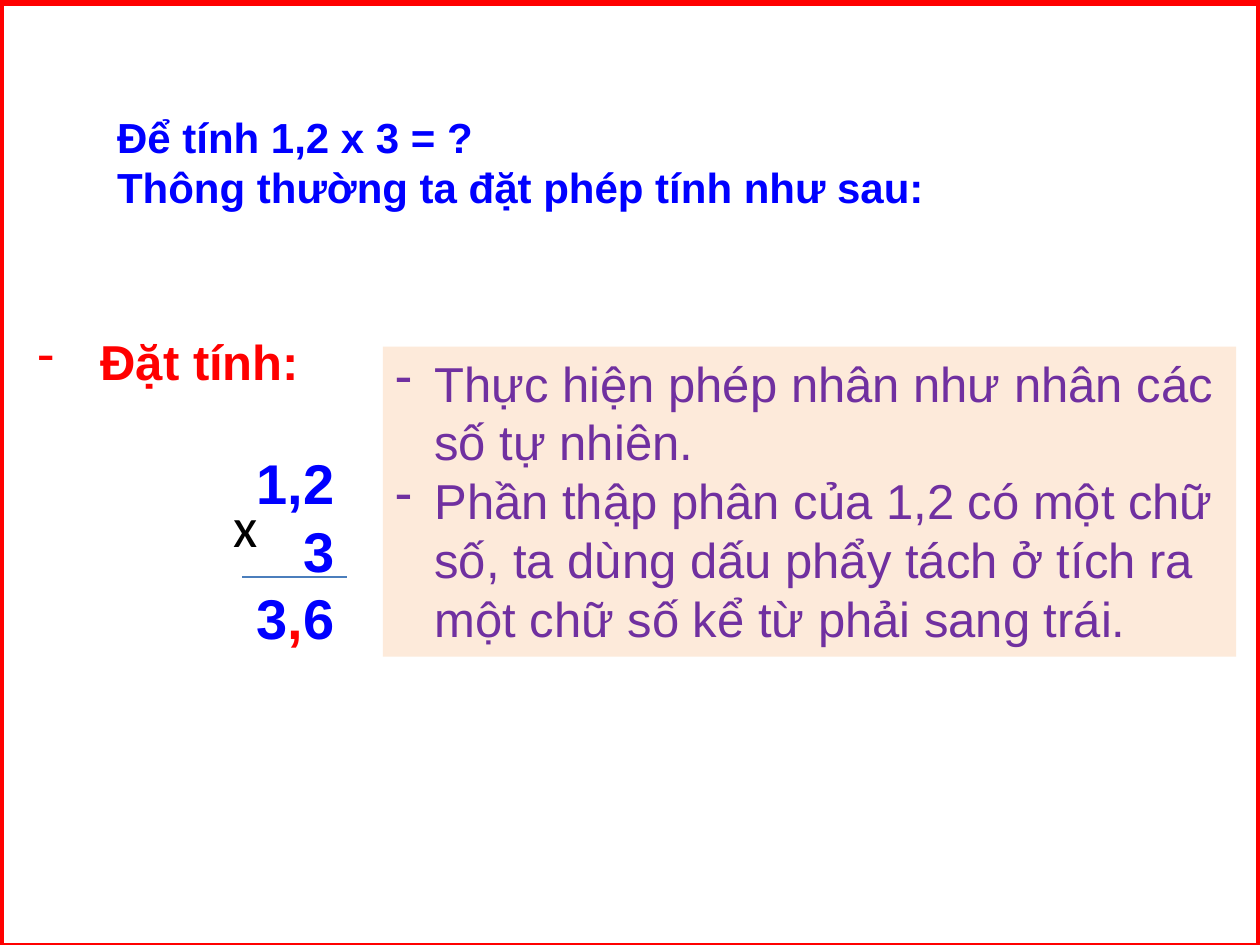
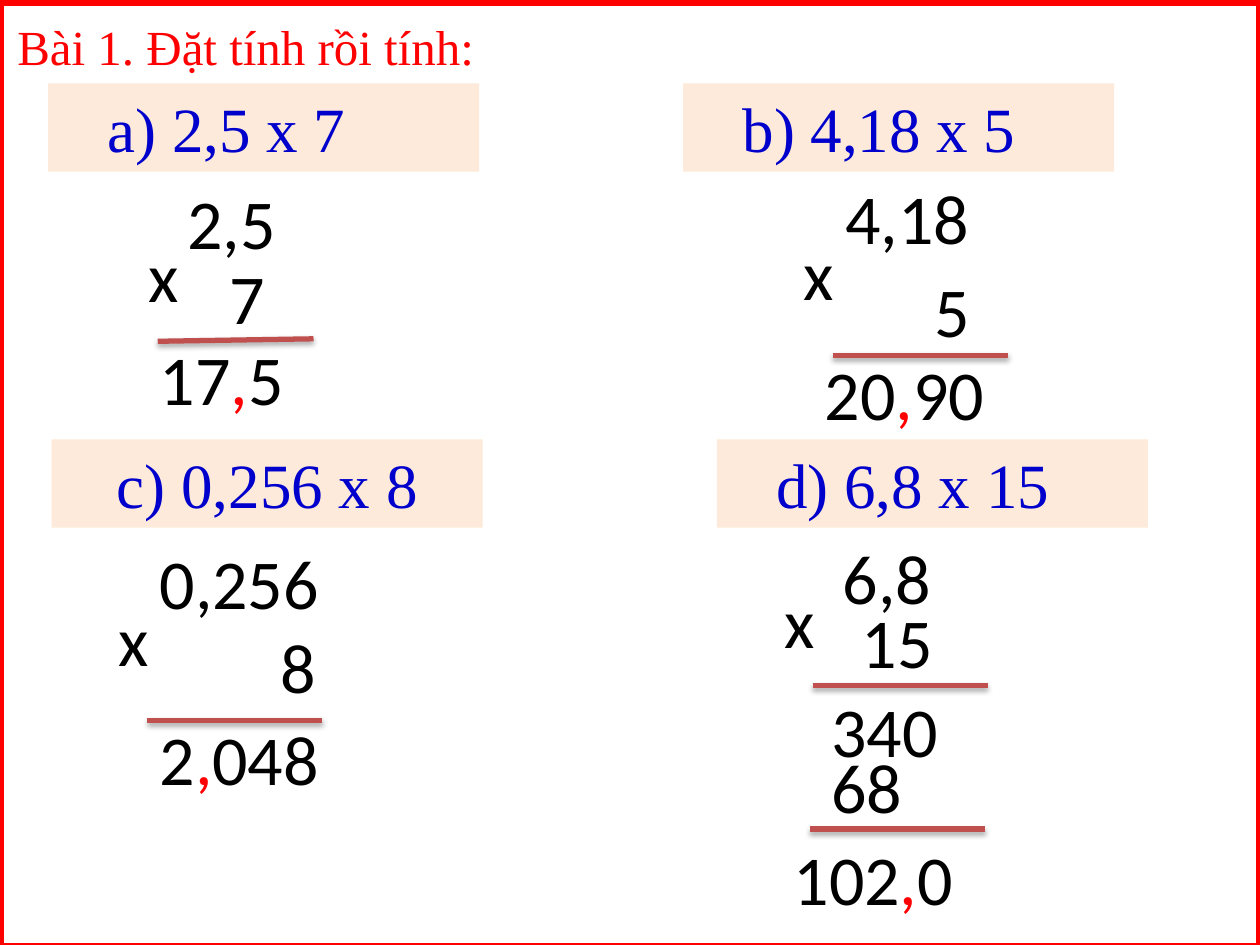
"""Build two lesson slides on multiplying a decimal by a whole number."""
from dataclasses import dataclass

from lxml import etree
from pptx import Presentation
from pptx import util as u
from pptx.dml.color import RGBColor
from pptx.enum import shapes, text
from pptx.oxml import ns

RED = RGBColor(0xFF, 0x00, 0x00)
BLUE = RGBColor(0x00, 0x00, 0xFF)
DARK_BLUE = RGBColor(0x00, 0x00, 0xCC)
PURPLE = RGBColor(0x70, 0x30, 0xA0)
BLACK = RGBColor(0x00, 0x00, 0x00)
PEACH = RGBColor(0xFD, 0xEA, 0xDA)
BRICK = RGBColor(0xC0, 0x50, 0x4D)
STEEL = RGBColor(0x4B, 0x7E, 0xBC)
LEFT, CENTER, RIGHT = text.PP_ALIGN.LEFT, text.PP_ALIGN.CENTER, text.PP_ALIGN.RIGHT


@dataclass(frozen=True)
class Area:
    """Position and size in centimetres."""
    left: float
    top: float
    width: float
    height: float

    def lengths(self) -> list[u.Cm]:
        """Return the four values as lengths."""
        return [u.Cm(value) for value in (self.left, self.top, self.width, self.height)]


@dataclass(frozen=True)
class Style:
    """Character format and alignment of a text."""
    font: str
    size: float
    color: RGBColor
    bold: bool = False
    align: text.PP_ALIGN = LEFT


@dataclass(frozen=True)
class Figure:
    """One number or sign of a written multiplication."""
    label: str
    left: float
    top: float


@dataclass(frozen=True)
class Rule:
    """A line under the numbers, from start to end."""
    left: float
    top: float
    right: float
    bottom: float


@dataclass(frozen=True)
class Problem:
    """An exercise banner with its worked solution; the last figure is the result."""
    question: str
    left: float
    top: float
    figures: tuple[Figure, ...]
    rules: tuple[Rule, ...]
    align: text.PP_ALIGN = LEFT


BANNER = Style("Times New Roman", 36, DARK_BLUE)
DIGITS = Style("Calibri", 40, BLACK)
TIMES_SIGN = Style("Calibri", 32, BLACK)
HEADING = Style("Arial", 28, RED, True)
STEPS = Style("Arial", 28, PURPLE)
WORKING = Style("Arial", 32, BLUE, True, RIGHT)

PROBLEMS = (
    Problem("a) 2,5 x 7", 0.97, 1.68,
            (Figure("2,5", 3.53, 3.48), Figure("x", 2.74, 4.55),
             Figure("7", 4.37, 5.0), Figure("17,5", 2.97, 6.63)),
            (Rule(3.18, 6.88, 6.32, 6.83),)),
    Problem("b) 4,18 x 5", 13.77, 1.68,
            (Figure("4,18", 16.79, 3.38), Figure("x", 15.95, 4.52),
             Figure("5", 18.59, 5.26), Figure("20,90", 16.38, 6.93)),
            (Rule(16.79, 7.16, 20.32, 7.16),)),
    Problem("c) 0,256 x 8", 1.04, 8.86,
            (Figure("0,256", 2.97, 10.74), Figure("x", 2.13, 11.89),
             Figure("8", 5.41, 12.45), Figure("2,048", 2.97, 14.3)),
            (Rule(2.97, 14.53, 6.5, 14.53),), CENTER),
    Problem("d) 6,8 x 15", 14.45, 8.86,
            (Figure("6,8", 16.74, 10.64), Figure("x", 15.57, 11.53),
             Figure("15", 17.12, 11.94), Figure("340", 16.51, 13.74),
             Figure("68", 16.51, 14.86), Figure("102,0", 15.75, 16.71)),
            (Rule(16.38, 13.82, 19.91, 13.82), Rule(16.33, 16.71, 19.86, 16.71))),
)


def write(box, lines: list[str], style: Style, inset: float = 0.25) -> None:
    """Fill a shape with paragraphs in one style."""
    frame = box.text_frame
    frame.text = "\n".join(lines)
    frame.word_wrap = True
    frame.auto_size = text.MSO_AUTO_SIZE.NONE
    frame.vertical_anchor = text.MSO_ANCHOR.TOP
    frame.margin_left, frame.margin_right = u.Cm(inset), u.Cm(0.25)
    frame.margin_top = frame.margin_bottom = u.Cm(0.13)
    for para in frame.paragraphs:
        para.alignment = style.align
        for span in para.runs:
            format_span(span, style)


def format_span(span, style: Style) -> None:
    """Apply the character format to one run."""
    span.font.name = style.font
    span.font.size = u.Pt(style.size)
    span.font.bold = style.bold
    span.font.color.rgb = style.color


def add_text(page, area: Area, lines: list[str], style: Style, inset: float = 0.25):
    """Add a plain text box."""
    box = page.shapes.add_textbox(*area.lengths())
    write(box, lines, style, inset)
    return box


def add_panel(page, area: Area, lines: list[str], style: Style, inset: float = 0.25):
    """Add a peach rectangle holding text."""
    box = page.shapes.add_shape(shapes.MSO_SHAPE.RECTANGLE, *area.lengths())
    box.shadow.inherit = False
    box.fill.solid()
    box.fill.fore_color.rgb = PEACH
    box.line.fill.background()
    write(box, lines, style, inset)
    return box


def add_dashes(box, indent: float) -> None:
    """Give every paragraph a hanging dash."""
    for para in box.text_frame.paragraphs:
        properties = para._p.get_or_add_pPr()
        properties.set("marL", str(u.Cm(indent)))
        properties.set("indent", str(-u.Cm(indent)))
        etree.SubElement(properties, ns.qn("a:buChar"), char="-")


def redden_comma(para, style: Style) -> None:
    """Split a result at its decimal comma and colour the comma red."""
    whole, comma, decimals = para.text.partition(",")
    para.text = whole
    for part in (comma, decimals):
        para.add_run().text = part
    for span in para.runs:
        format_span(span, style)
    para.runs[1].font.color.rgb = RED


def add_rule(page, rule: Rule, color: RGBColor, width: float, shadow: bool) -> None:
    """Draw a calculation line, with a soft shadow if wanted."""
    ends = [u.Cm(value) for value in (rule.left, rule.top, rule.right, rule.bottom)]
    line = page.shapes.add_connector(shapes.MSO_CONNECTOR.STRAIGHT, *ends)
    line.line.color.rgb = color
    line.line.width = u.Pt(width)
    effects = etree.SubElement(line._element.spPr, ns.qn("a:effectLst"))
    if shadow:
        outer = etree.SubElement(effects, ns.qn("a:outerShdw"), blurRad=str(u.Pt(3.1)),
                                 dist=str(u.Pt(1.8)), dir="5400000", rotWithShape="0")
        tint = etree.SubElement(outer, ns.qn("a:srgbClr"), val=str(BLACK))
        etree.SubElement(tint, ns.qn("a:alpha"), val="35000")


def add_page(deck, title: list[str], area: Area, style: Style):
    """Add a slide with the red frame and a formatted title."""
    page = deck.slides.add_slide(deck.slide_layouts[5])
    heading = page.shapes.title
    heading.left, heading.top, heading.width, heading.height = area.lengths()
    write(heading, title, style)
    border = page.shapes.add_shape(shapes.MSO_SHAPE.RECTANGLE,
                                   *Area(0, 0.05, 25.4, 19.05).lengths())
    border.shadow.inherit = False
    border.fill.background()
    border.line.color.rgb = RED
    border.line.width = u.Pt(4.5)
    return page


def add_problem(page, problem: Problem) -> None:
    """Draw one exercise with its solution."""
    style = Style(BANNER.font, BANNER.size, BANNER.color, align=problem.align)
    inset = 0.25 if problem.align == CENTER else 1.2
    add_panel(page, Area(problem.left, problem.top, 8.69, 1.78),
              [problem.question], style, inset)
    for figure in problem.figures:
        box = add_text(page, Area(figure.left, figure.top, 4.7, 1.96), [figure.label], DIGITS)
    redden_comma(box.text_frame.paragraphs[0], DIGITS)
    for rule in problem.rules:
        add_rule(page, rule, BRICK, 3, True)


def build_method(deck) -> None:
    """Build the slide that explains the method."""
    page = add_page(deck, ["Để tính 1,2 x 3 = ?", "Thông thường ta đặt phép tính như sau:"],
                    Area(2.11, 2.11, 20.12, 2.31), Style("Arial", 24, BLUE, True))
    heading = add_text(page, Area(0.38, 6.55, 7.2, 1.5), ["Đặt tính:"], HEADING, 0.38)
    add_dashes(heading, 1.27)
    working = add_text(page, Area(4.45, 8.92, 2.54, 4.3), ["1,2", "3", "3,6"], WORKING)
    redden_comma(working.text_frame.paragraphs[-1], WORKING)
    add_rule(page, Rule(4.88, 11.63, 6.99, 11.63), STEEL, 0.75, False)
    add_text(page, Area(4.45, 9.78, 1.2, 1.63), ["x"], TIMES_SIGN)
    steps = add_panel(page, Area(7.72, 6.99, 17.2, 6.25), [
        "Thực hiện phép nhân như nhân các số tự nhiên.",
        "Phần thập phân của 1,2 có một chữ số, ta dùng dấu phẩy tách ở tích ra "
        "một chữ số kể từ phải sang trái.",
    ], STEPS)
    add_dashes(steps, 0.79)


def build_exercises(deck) -> None:
    """Build the slide with the four exercises."""
    page = add_page(deck, ["Bài 1. Đặt tính rồi tính:"], Area(0.1, 0.2, 14.05, 1.45),
                    Style("Times New Roman", 28, RED))
    for problem in PROBLEMS:
        add_problem(page, problem)


def main() -> None:
    """Create and save the deck."""
    deck = Presentation()
    deck.slide_width, deck.slide_height = u.Cm(25.4), u.Cm(19.05)
    build_method(deck)
    build_exercises(deck)
    deck.save("out.pptx")


if __name__ == "__main__":
    main()
